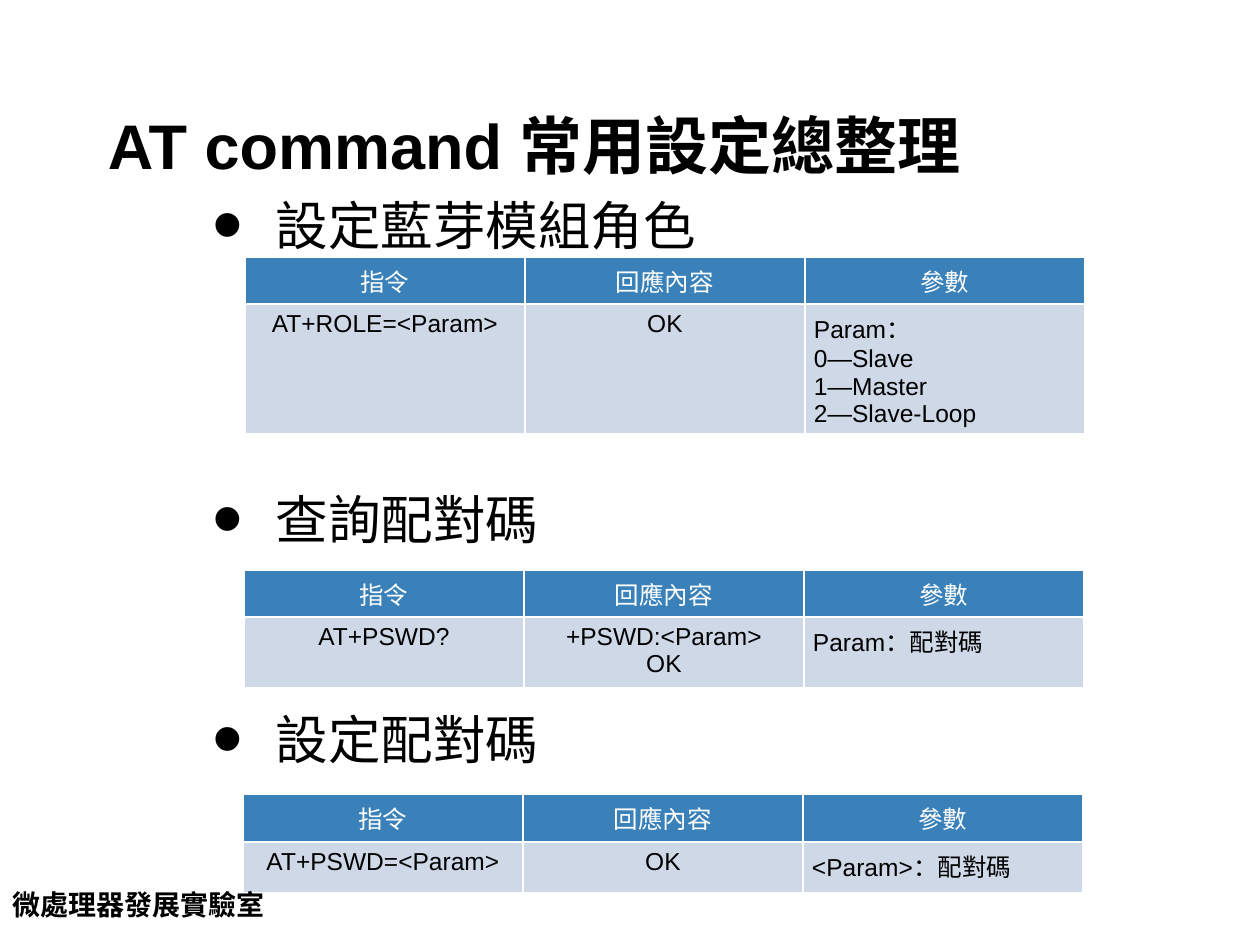
from lxml import etree
from pptx import Presentation
from pptx.dml.color import RGBColor
from pptx.enum import text
from pptx.oxml import ns
from pptx.util import Pt

COLORS = {"ink": "000000", "white": "FFFFFF", "head": "3A81BA", "body": "CED8E7"}
HEADERS = ["指令", "回應內容", "參數"]
SECTIONS = [
    {"heading": "設定藍芽模組角色", "top": 180, "table": (245, 77), "rows": (47, 130),
     "cells": ["AT+ROLE=<Param>", "OK",
               "Param：\n0―Slave\n1―Master\n2―Slave-Loop"]},
    {"heading": "查詢配對碼", "top": 474, "table": (244, 96), "rows": (47, 68),
     "cells": ["AT+PSWD?", "+PSWD:<Param>\nOK", "Param：配對碼"]},
    {"heading": "設定配對碼", "top": 694, "table": (243, 100), "rows": (48, 51),
     "cells": ["AT+PSWD=<Param>", "OK", "<Param>：配對碼"]},
]


def px(n):
    return round(n * 914400 / 126)


def rgb(name):
    return RGBColor.from_string(COLORS[name])


def assign(obj, values):
    for key, value in values.items():
        setattr(obj, key, value)


def sub(parent, tag, **attrs):
    return etree.SubElement(parent, ns.qn(tag), attrs)


def write(tf, content, size, color="ink", bold=False, align=None):
    for i, line in enumerate(content.split("\n")):
        p = tf.paragraphs[0] if i == 0 else tf.add_paragraph()
        p.alignment = align
        r = p.add_run()
        r.text = line
        assign(r.font, {"name": "Arial", "size": Pt(size), "bold": bold})
        r.font.color.rgb = rgb(color)


def add_text(slide, box, content, size, bold=False, inset=13,
             anchor=text.MSO_ANCHOR.TOP):
    tf = slide.shapes.add_textbox(*map(px, box)).text_frame
    assign(tf, {"word_wrap": True, "vertical_anchor": anchor,
                "margin_left": px(13), "margin_right": px(13),
                "margin_top": px(inset), "margin_bottom": px(inset)})
    write(tf, content, size, bold=bold)
    return tf.paragraphs[0]


def add_title(slide, box):
    p = add_text(slide, box, "AT command 常用設定總整理", 36, True,
                 anchor=text.MSO_ANCHOR.BOTTOM)
    p._p.get_or_add_pPr().set("indent", str(px(32)))


def add_heading(slide, box, content):
    p = add_text(slide, box, content, 30)
    p.space_before = Pt(6)
    pPr = p._p.get_or_add_pPr()
    pPr.set("marL", str(px(71)))
    pPr.set("indent", str(px(-63)))
    sub(sub(pPr, "a:buClr"), "a:srgbClr", val=COLORS["ink"])
    sub(pPr, "a:buSzPct", val="167000")
    sub(pPr, "a:buFont", typeface="Arial")
    sub(pPr, "a:buChar", char="•")


def add_borders(cell):
    tcPr = cell._tc.get_or_add_tcPr()
    for i, side in enumerate("LRTB"):
        ln = sub(tcPr, f"a:ln{side}", w=str(Pt(1)))
        sub(sub(ln, "a:solidFill"), "a:srgbClr", val=COLORS["white"])
        tcPr.insert(i, ln)


def add_command_table(slide, box, heights, cells):
    table = slide.shapes.add_table(2, len(HEADERS), *map(px, box)).table
    assign(table, {"first_row": False, "horz_banding": False})
    for column in table.columns:
        column.width = px(box[2] / len(HEADERS))
    rows = zip(heights, (HEADERS, cells), ("head", "body"), ("white", "ink"))
    for i, (height, values, fill, color) in enumerate(rows):
        table.rows[i].height = px(height)
        for j, value in enumerate(values):
            cell = table.cell(i, j)
            assign(cell, {"margin_left": px(9), "margin_right": px(9),
                          "margin_top": px(6), "margin_bottom": px(6)})
            cell.fill.solid()
            cell.fill.fore_color.rgb = rgb(fill)
            add_borders(cell)
            left = fill == "body" and j == len(HEADERS) - 1
            write(cell.text_frame, value, 14, color,
                  align=text.PP_ALIGN.LEFT if left else text.PP_ALIGN.CENTER)


def add_section(slide, box, section):
    x, y, w, h = box
    table_x, offset = section["table"]
    add_heading(slide, (x, y, w, h), section["heading"])
    add_command_table(slide, (table_x, y + offset, 840, sum(section["rows"])),
                      section["rows"], section["cells"])


def add_footer(slide, box):
    add_text(slide, box, "微處理器發展實驗室", 16, True, inset=6)


def main():
    prs = Presentation()
    assign(prs, {"slide_width": px(1260), "slide_height": px(945)})
    slide = prs.slides.add_slide(prs.slide_layouts[6])
    add_title(slide, (63, 38, 1134, 157))
    for section in SECTIONS:
        add_section(slide, (192, section["top"], 998, 90), section)
    add_footer(slide, (0, 882, 1260, 63))
    prs.save("out.pptx")


if __name__ == "__main__":
    main()
